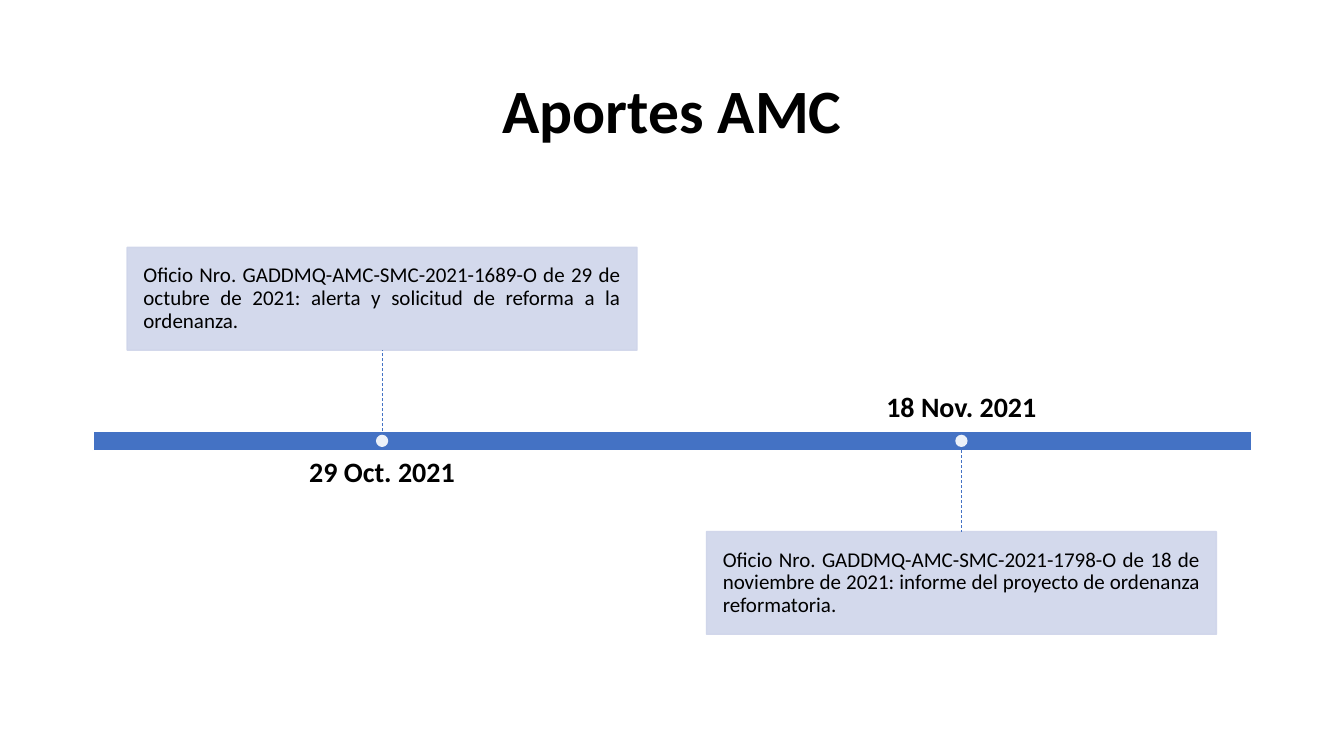
from lxml import etree
from pptx import Presentation
from pptx.dml.color import RGBColor
from pptx.enum import dml, shapes, text
from pptx.oxml import ns
from pptx.util import Cm, Pt

FONT = "Calibri"
BLACK, WHITE, BLUE, PALE = "000000", "FFFFFF", "4472C4", "CFD5EA"
AXIS_LEFT, AXIS_WIDTH, AXIS_MIDDLE, AXIS_HEIGHT = 2.34, 29.21, 11.11, 0.48
BOX_WIDTH, BOX_HEIGHT, BOX_OFFSET = 12.85, 2.59, 3.58
DATE_WIDTH, DATE_HEIGHT, DATE_OFFSET = 11.68, 1.37, 1.13
DOT_SIZE = 0.31
ABOVE, BELOW = -1, 1

EVENTS = [
    (9.63, ABOVE, "29 Oct. 2021",
     "Oficio Nro. GADDMQ-AMC-SMC-2021-1689-O de 29 de octubre de 2021: "
     "alerta y solicitud de reforma a la ordenanza."),
    (24.23, BELOW, "18 Nov. 2021",
     "Oficio Nro. GADDMQ-AMC-SMC-2021-1798-O de 18 de noviembre de 2021: "
     "informe del proyecto de ordenanza reformatoria."),
]


def paint(color_format, color):
    color_format.rgb = RGBColor.from_string(color)


def fill_solid(fill, color, opacity=100):
    fill.solid()
    paint(fill.fore_color, color)
    if opacity < 100:
        tint = fill._xPr.find(ns.qn("a:solidFill"))[0]
        etree.SubElement(tint, ns.qn("a:alpha"), val=str(opacity * 1000))


def centered(center, middle, width, height):
    return Cm(center - width / 2), Cm(middle - height / 2), Cm(width), Cm(height)


def write(shape, words, size, align, anchor, bold=False, inset=0):
    frame = shape.text_frame
    frame.word_wrap = True
    frame.auto_size = text.MSO_AUTO_SIZE.NONE
    frame.vertical_anchor = anchor
    frame.margin_left = frame.margin_right = Cm(inset)
    frame.margin_top = frame.margin_bottom = Cm(inset)
    frame.text = words
    para = frame.paragraphs[0]
    para.alignment = align
    para.line_spacing = 0.9
    para.font.name = FONT
    para.font.size = Pt(size)
    para.font.bold = bold
    paint(para.font.color, BLACK)


def add_title(page, words):
    title = page.shapes.title
    title.left, title.top = Cm(AXIS_LEFT), Cm(1.02)
    title.width, title.height = Cm(AXIS_WIDTH), Cm(3.68)
    write(title, words, 44, text.PP_ALIGN.CENTER, text.MSO_ANCHOR.MIDDLE, bold=True)


def add_filled(page, kind, bounds, color, opacity=100, outline=None):
    shape = page.shapes.add_shape(kind, *bounds)
    shape.shadow.inherit = False
    fill_solid(shape.fill, color, opacity)
    if outline:
        shape.line.width = Pt(1)
        fill_solid(shape.line.fill, outline, opacity)
    else:
        shape.line.fill.background()
    return shape


def add_axis(page):
    bounds = centered(AXIS_LEFT + AXIS_WIDTH / 2, AXIS_MIDDLE, AXIS_WIDTH, AXIS_HEIGHT)
    add_filled(page, shapes.MSO_SHAPE.RECTANGLE, bounds, BLUE, outline=WHITE)


def add_stem(page, center, start, end):
    stem = page.shapes.add_connector(
        shapes.MSO_CONNECTOR.STRAIGHT, Cm(center), Cm(start), Cm(center), Cm(end))
    paint(stem.line.color, BLUE)
    stem.line.width = Pt(0.5)
    stem.line.dash_style = dml.MSO_LINE.DASH
    etree.SubElement(stem._element.spPr, ns.qn("a:effectLst"))


def add_event(page, center, side, date, words):
    box_middle = AXIS_MIDDLE + side * BOX_OFFSET
    box = add_filled(page, shapes.MSO_SHAPE.RECTANGLE,
                     centered(center, box_middle, BOX_WIDTH, BOX_HEIGHT),
                     PALE, opacity=90, outline=PALE)
    write(box, words, 15, text.PP_ALIGN.JUSTIFY, text.MSO_ANCHOR.MIDDLE, inset=0.41)

    label = page.shapes.add_textbox(
        *centered(center, AXIS_MIDDLE - side * DATE_OFFSET, DATE_WIDTH, DATE_HEIGHT))
    anchor = text.MSO_ANCHOR.TOP if side == ABOVE else text.MSO_ANCHOR.BOTTOM
    write(label, date, 20, text.PP_ALIGN.CENTER, anchor, bold=True)

    add_stem(page, center, AXIS_MIDDLE + side * AXIS_HEIGHT / 2,
             box_middle - side * BOX_HEIGHT / 2)
    add_filled(page, shapes.MSO_SHAPE.OVAL,
               centered(center, AXIS_MIDDLE, DOT_SIZE, DOT_SIZE), WHITE, opacity=90)


def main():
    deck = Presentation()
    deck.slide_width, deck.slide_height = Cm(33.87), Cm(19.05)
    page = deck.slides.add_slide(deck.slide_layouts[5])
    add_title(page, "Aportes AMC")
    add_axis(page)
    for event in EVENTS:
        add_event(page, *event)
    deck.save("out.pptx")


if __name__ == "__main__":
    main()
